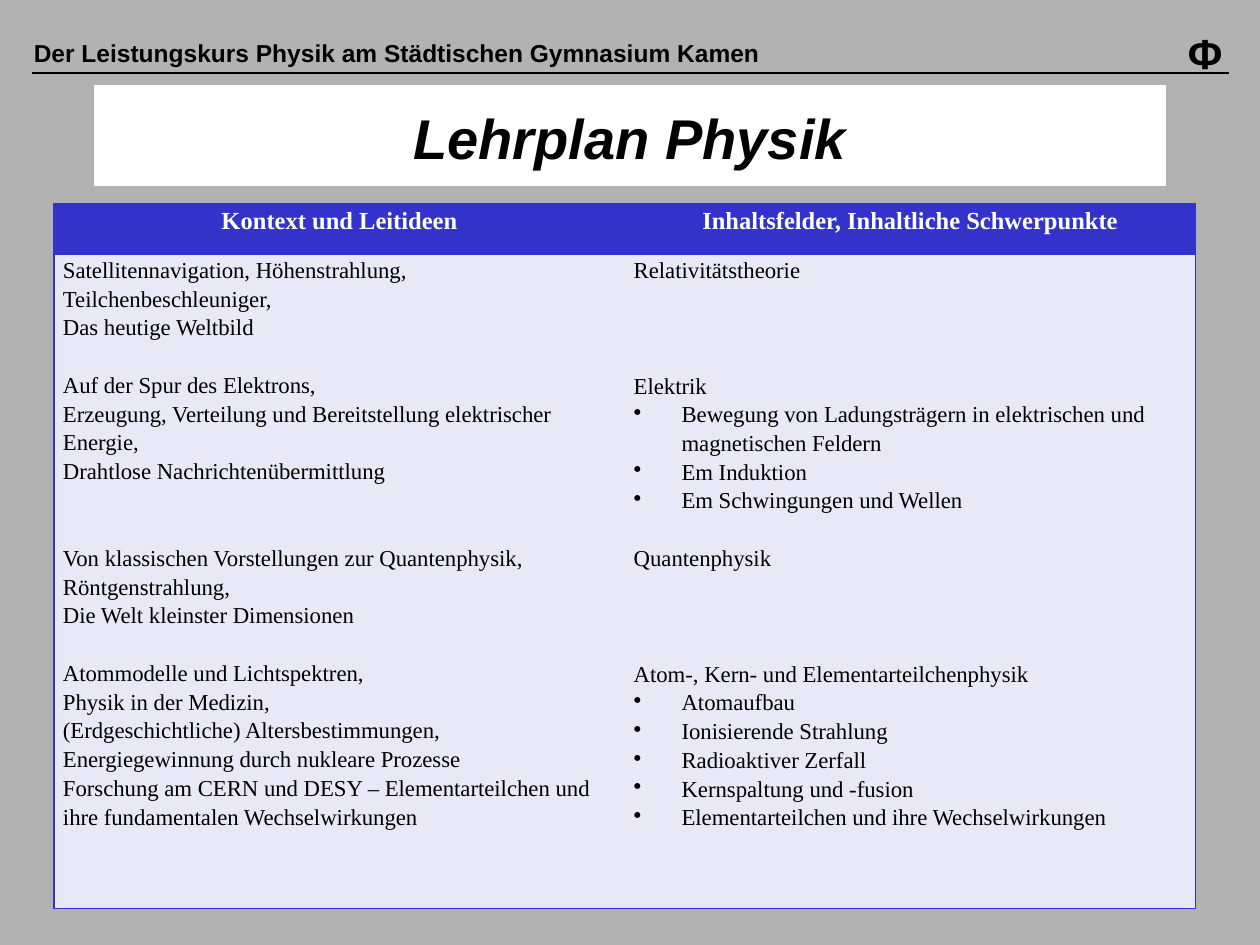
import pptx
import pptx.util
import pptx.dml.color
import pptx.enum.shapes
import pptx.enum.text
import pptx.oxml.ns
from lxml import etree

Inches, Pt = pptx.util.Inches, pptx.util.Pt
Align = pptx.enum.text.PP_ALIGN
Anchor = pptx.enum.text.MSO_ANCHOR
qn = pptx.oxml.ns.qn

COLORS = {"back": "B2B2B2", "ink": "000000", "white": "FFFFFF",
          "blue": "3333CC", "pale": "E8E8F6"}
HEAD = {"name": "Arial", "bold": True, "italic": False}
TITLE = {"name": "Arial", "size": Pt(32), "bold": True, "italic": True}
TOP = {"name": "Times New Roman", "size": Pt(14), "bold": True}
BODY = {"name": "Times New Roman", "size": Pt(13), "bold": False}
LINE = 16.55  # height of one body line in points

HEADS = ["Kontext und Leitideen", "Inhaltsfelder, Inhaltliche Schwerpunkte"]
# Each group: lines left free above it, plain lines, bulleted lines
IDEAS = [
    (0, ["Satellitennavigation, Höhenstrahlung, Teilchenbeschleuniger,",
         "Das heutige Weltbild"], []),
    (1, ["Auf der Spur des Elektrons,",
         "Erzeugung, Verteilung und Bereitstellung elektrischer Energie,",
         "Drahtlose Nachrichtenübermittlung"], []),
    (2, ["Von klassischen Vorstellungen zur Quantenphysik,",
         "Röntgenstrahlung,",
         "Die Welt kleinster Dimensionen"], []),
    (1, ["Atommodelle und Lichtspektren,",
         "Physik in der Medizin,",
         "(Erdgeschichtliche) Altersbestimmungen,",
         "Energiegewinnung durch nukleare Prozesse",
         "Forschung am CERN und DESY – Elementarteilchen und "
         "ihre fundamentalen Wechselwirkungen"], []),
]
FIELDS = [
    (0, ["Relativitätstheorie"], []),
    (3, ["Elektrik"],
     ["Bewegung von Ladungsträgern in elektrischen und magnetischen Feldern",
      "Em Induktion", "Em Schwingungen und Wellen"]),
    (1, ["Quantenphysik"], []),
    (3, ["Atom-, Kern- und Elementarteilchenphysik"],
     ["Atomaufbau", "Ionisierende Strahlung", "Radioaktiver Zerfall",
      "Kernspaltung und -fusion",
      "Elementarteilchen und ihre Wechselwirkungen"]),
]


def rgb(key):
    return pptx.dml.color.RGBColor.from_string(COLORS[key])


def paint(fill, key):
    fill.solid()
    fill.fore_color.rgb = rgb(key)


def style(font, form, key):
    for name, value in form.items():
        setattr(font, name, value)
    font.color.rgb = rgb(key)


def place(shape, box):
    shape.left, shape.top, shape.width, shape.height = map(Inches, box)


def add_label(slide, box, text, size):
    frame = slide.shapes.add_textbox(*map(Inches, box)).text_frame
    frame.word_wrap = True
    para = frame.paragraphs[0]
    para.text = text
    style(para.font, {**HEAD, "size": Pt(size)}, "ink")


def add_header(slide, box):
    left, top, width, height = box
    add_label(slide, (left - 0.08, top + 0.08, width, 0.33),
              "Der Leistungskurs Physik am Städtischen Gymnasium Kamen", 14)
    base = Inches(top + height)
    rule = slide.shapes.add_connector(
        pptx.enum.shapes.MSO_CONNECTOR.STRAIGHT,
        Inches(left), base, Inches(left + width), base)
    rule.line.color.rgb = rgb("ink")
    rule.line.width = Pt(0.75)
    etree.SubElement(rule._element.spPr, qn("a:effectLst"))
    add_label(slide, (left + width - 0.42, top, 0.42, 0.5), "Φ", 24)


def add_title(slide, box):
    title = slide.shapes.title
    place(title, box)
    paint(title.fill, "white")
    title.line.color.rgb = rgb("white")
    title.line.width = Pt(0.75)
    frame = title.text_frame
    frame.auto_size = pptx.enum.text.MSO_AUTO_SIZE.NONE
    frame.vertical_anchor = Anchor.MIDDLE
    frame.margin_top = Inches(0.08)
    para = frame.paragraphs[0]
    para.text = "Lehrplan Physik"
    para.alignment = Align.CENTER
    style(para.font, TITLE, "ink")


def add_edges(cell, sides):
    props = cell._tc.get_or_add_tcPr()
    for spot, side in enumerate("LRTB"):
        edge = etree.Element(qn("a:ln" + side), w=str(Pt(1)))
        if side in sides:
            fill = etree.SubElement(edge, qn("a:solidFill"))
            etree.SubElement(fill, qn("a:srgbClr"), val=COLORS["blue"])
        else:
            etree.SubElement(edge, qn("a:noFill"))
        props.insert(spot, edge)


def add_bullet(para):
    props = para._p.get_or_add_pPr()
    props.set("marL", str(Inches(0.38)))
    props.set("indent", str(Inches(-0.38)))
    etree.SubElement(props, qn("a:buChar"), char="•")


def write_groups(frame, groups):
    para = frame.paragraphs[0]
    for gap, plain, points in groups:
        for spot, text in enumerate(plain + points):
            if para is None:
                para = frame.add_paragraph()
            para.text = text
            para.line_spacing = 1.15
            if gap and spot == 0:
                para.space_before = Pt(gap * LINE)
            if spot >= len(plain):
                add_bullet(para)
            style(para.font, BODY, "ink")
            para = None


def add_plan(slide, box):
    table = slide.shapes.add_table(2, 2, *map(Inches, box)).table
    table.horz_banding = False
    table.rows[0].height = Inches(0.4)
    table.rows[1].height = Inches(box[3] - 0.4)
    for col, groups in enumerate((IDEAS, FIELDS)):
        table.columns[col].width = Inches(box[2] / 2)
        for row, fill in enumerate(("blue", "pale")):
            cell = table.cell(row, col)
            cell.margin_left = cell.margin_right = Inches(0.07)
            cell.margin_top = cell.margin_bottom = 0
            paint(cell.fill, fill)
            add_edges(cell, "LTB" if col == 0 else "RTB")
        # Heading, then the groups below it
        para = table.cell(0, col).text_frame.paragraphs[0]
        para.text = HEADS[col]
        para.alignment = Align.CENTER
        para.line_spacing = 1.15
        style(para.font, TOP, "white")
        write_groups(table.cell(1, col).text_frame, groups)


def main():
    deck = pptx.Presentation()
    deck.slide_width, deck.slide_height = Inches(10), Inches(7.5)
    slide = deck.slides.add_slide(deck.slide_layouts[5])
    paint(slide.background.fill, "back")
    add_header(slide, (0.25, 0.17, 9.5, 0.41))
    add_title(slide, (0.75, 0.68, 8.5, 0.79))
    add_plan(slide, (0.43, 1.62, 9.06, 5.59))
    deck.save("out.pptx")


if __name__ == "__main__":
    main()
